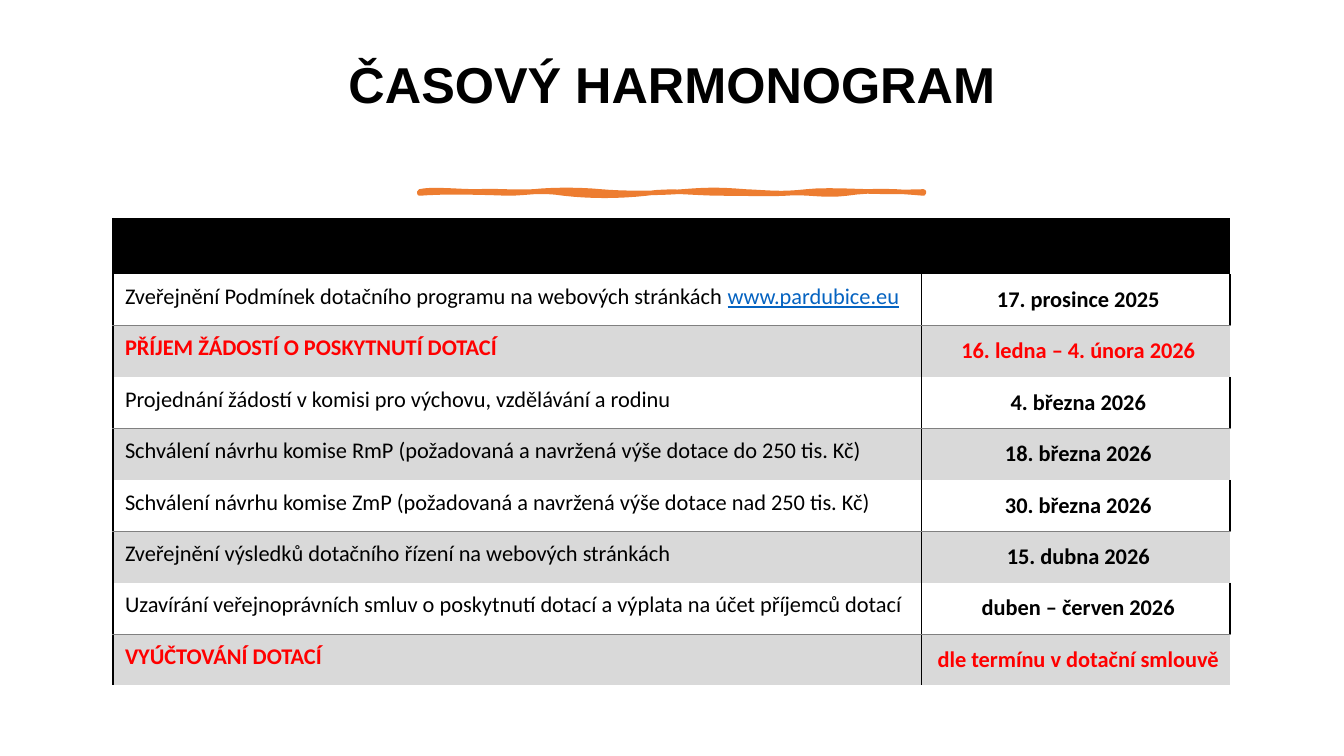
from dataclasses import dataclass

from lxml.etree import SubElement
from pptx import Presentation
from pptx.dml.color import RGBColor
from pptx.enum.text import MSO_ANCHOR as Anchor, PP_ALIGN as Align
from pptx.oxml.ns import qn
from pptx.util import Inches, Pt

BLACK, RED, ORANGE, LINK = "000000", "FF0000", "ED7D31", "0563C1"
GREY, RULE = "D9D9D9", "808080"
THICK, THIN = (BLACK, 1.5), (RULE, 0.5)


@dataclass(frozen=True)
class Step:
    task: str
    date: str
    link: str = ""
    key: bool = False


STEPS = [
    Step("Zveřejnění Podmínek dotačního programu na webových stránkách ",
         "17. prosince 2025", link="www.pardubice.eu"),
    Step("PŘÍJEM ŽÁDOSTÍ O POSKYTNUTÍ DOTACÍ", "16. ledna – 4. února 2026", key=True),
    Step("Projednání žádostí v komisi pro výchovu, vzdělávání a rodinu", "4. března 2026"),
    Step("Schválení návrhu komise RmP (požadovaná a navržená výše dotace do 250 tis. Kč)",
         "18. března 2026"),
    Step("Schválení návrhu komise ZmP (požadovaná a navržená výše dotace nad 250 tis. Kč)",
         "30. března 2026"),
    Step("Zveřejnění výsledků dotačního řízení na webových stránkách", "15. dubna 2026"),
    Step("Uzavírání veřejnoprávních smluv o poskytnutí dotací a výplata na účet příjemců dotací",
         "duben – červen 2026"),
    Step("VYÚČTOVÁNÍ DOTACÍ", "dle termínu v dotační smlouvě", key=True),
]

# Brush stroke: start point, then Bézier segments (two controls and an end)
STROKE_START = (4.16, 1.9)
STROKE_CURVES = [
    (4.28, 1.87, 4.54, 1.9, 4.73, 1.9), (4.92, 1.89, 5.09, 1.91, 5.29, 1.9),
    (5.49, 1.88, 5.74, 1.88, 5.96, 1.9), (6.17, 1.92, 6.53, 1.92, 6.77, 1.9),
    (7.02, 1.88, 7.14, 1.88, 7.39, 1.9), (7.63, 1.91, 7.74, 1.93, 8, 1.9),
    (8.26, 1.87, 8.67, 1.92, 9.16, 1.9), (9.17, 1.91, 9.16, 1.91, 9.16, 1.92),
    (8.95, 1.9, 8.65, 1.88, 8.4, 1.92), (8.15, 1.95, 8.01, 1.9, 7.79, 1.92),
    (7.56, 1.93, 7.47, 1.92, 7.17, 1.92), (6.87, 1.92, 6.67, 1.88, 6.41, 1.92),
    (6.14, 1.95, 5.85, 1.95, 5.59, 1.92), (5.34, 1.88, 5.23, 1.92, 5.03, 1.92),
    (4.83, 1.91, 4.38, 1.9, 4.16, 1.92), (4.16, 1.91, 4.16, 1.9, 4.16, 1.9),
]


def rgb(color: str) -> RGBColor:
    return RGBColor.from_string(color)


def add_text(paragraph, text: str, *, size: float = 16, font: str = "Calibri",
             color: str = BLACK, bold: bool = False, underline: bool = False,
             align=Align.LEFT) -> None:
    paragraph.alignment = align
    run = paragraph.add_run()
    run.text = text
    run.font.size, run.font.name = Pt(size), font
    run.font.bold, run.font.underline = bold, underline
    run.font.color.rgb = rgb(color)


def flatten(start: tuple, curves: list[tuple], steps: int = 8) -> list[tuple]:
    """Turn Bézier segments into points in EMU."""
    points, (x0, y0) = [], start
    for x1, y1, x2, y2, x3, y3 in curves:
        for i in range(1, steps + 1):
            t = i / steps
            u = 1 - t
            a, b, c, d = u**3, 3 * u * u * t, 3 * u * t * t, t**3
            points.append((Inches(a * x0 + b * x1 + c * x2 + d * x3),
                           Inches(a * y0 + b * y1 + c * y2 + d * y3)))
        x0, y0 = x3, y3
    return points


def draw_stroke(slide) -> None:
    builder = slide.shapes.build_freeform(*(Inches(v) for v in STROKE_START))
    builder.add_line_segments(flatten(STROKE_START, STROKE_CURVES), close=True)
    stroke = builder.convert_to_shape()
    stroke.shadow.inherit = False
    stroke.fill.solid()
    stroke.fill.fore_color.rgb = rgb(ORANGE)
    stroke.line.color.rgb = rgb(ORANGE)
    stroke.line.width = Pt(3.25)


def style_cell(cell, fill: str | None, **borders: tuple[str, float]) -> None:
    """Set the fill and the L, R, T, B borders; sides not given have no line."""
    properties = cell._tc.get_or_add_tcPr()
    for side in "LRTB":
        line = SubElement(properties, qn(f"a:ln{side}"))
        if side in borders:
            color, width = borders[side]
            line.set("w", str(Pt(width)))
            SubElement(SubElement(line, qn("a:solidFill")), qn("a:srgbClr")).set("val", color)
        else:
            SubElement(line, qn("a:noFill"))
    if fill:
        cell.fill.solid()
        cell.fill.fore_color.rgb = rgb(fill)
    else:
        cell.fill.background()


def draw_schedule(slide) -> None:
    schedule = slide.shapes.add_table(len(STEPS) + 1, 2, Inches(1.12), Inches(2.17),
                                      Inches(11.08), Inches(4.63)).table
    schedule.first_row = schedule.horz_banding = False
    for column, width in zip(schedule.columns, (8.02, 3.06)):
        column.width = Inches(width)
    for i, row in enumerate(schedule.rows):
        row.height = Inches(0.51 if i else 0.55)

    for cell in schedule.rows[0].cells:
        style_cell(cell, BLACK, L=THICK, T=THICK)
    schedule.cell(0, 0).merge(schedule.cell(0, 1))

    for i, step in enumerate(STEPS, start=1):
        task, date = schedule.rows[i].cells
        for cell in (task, date):
            cell.margin_left, cell.margin_right = Inches(0.12), Inches(0.07)
            cell.margin_top = cell.margin_bottom = Inches(0.09)
        if i % 2:
            style_cell(task, None, L=THICK, R=THICK, B=THIN)
            style_cell(date, None, L=THICK, R=THICK, B=THIN)
        else:
            style_cell(task, GREY, L=THICK, R=THICK, T=THIN)
            style_cell(date, GREY, L=THICK, T=THIN)
        color = RED if step.key else BLACK
        task_line = task.text_frame.paragraphs[0]
        add_text(task_line, step.task, color=color, bold=step.key)
        if step.link:
            add_text(task_line, step.link, color=LINK, underline=True)
        date.vertical_anchor = Anchor.MIDDLE
        add_text(date.text_frame.paragraphs[0], step.date, color=color, bold=True,
                 align=Align.CENTER)


def draw_title(slide) -> None:
    title = slide.shapes.add_textbox(Inches(0.7), Inches(0.46), Inches(11.93), Inches(1.37))
    frame = title.text_frame
    frame.word_wrap = True
    frame.vertical_anchor = Anchor.TOP
    frame.margin_top = Inches(0.14)
    heading = frame.paragraphs[0]
    heading.line_spacing = 0.9
    add_text(heading, "ČASOVÝ HARMONOGRAM", size=36, font="Arial", bold=True,
             align=Align.CENTER)


def main() -> None:
    deck = Presentation()
    deck.slide_width, deck.slide_height = Inches(13.33), Inches(7.5)
    slide = deck.slides.add_slide(deck.slide_layouts[6])
    draw_title(slide)
    draw_stroke(slide)
    draw_schedule(slide)
    deck.save("out.pptx")


if __name__ == "__main__":
    main()
